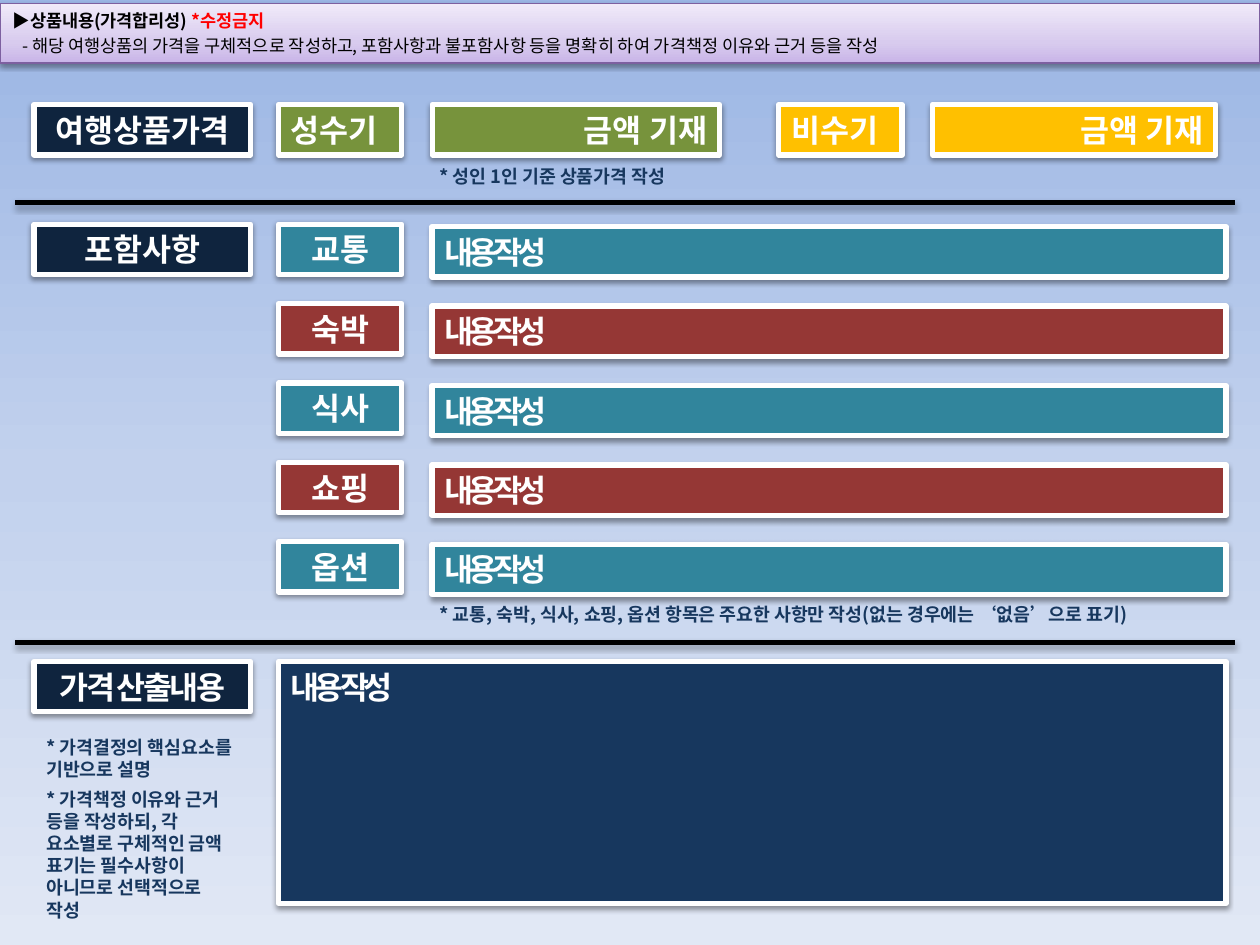
from copy import deepcopy

from lxml import etree
from pptx import Presentation
from pptx.dml.color import RGBColor
from pptx.enum import shapes, text
from pptx.oxml import ns
from pptx.util import Inches, Pt

FONT = "Noto Sans CJK KR"
WHITE = RGBColor(0xFF, 0xFF, 0xFF)
BLACK = RGBColor(0, 0, 0)
RED = RGBColor(0xFF, 0, 0)
INK = RGBColor(0x0F, 0x24, 0x3E)
NAVY = RGBColor(0x17, 0x37, 0x5E)
GREEN = RGBColor(0x77, 0x93, 0x3C)
AMBER = RGBColor(0xFF, 0xC0, 0)
TEAL = RGBColor(0x31, 0x85, 0x9C)
BRICK = RGBColor(0x95, 0x37, 0x35)
PURPLE = RGBColor(0x7D, 0x60, 0xA0)
SKY = [(0, RGBColor(0x9A, 0xB5, 0xE4)), (0.5, RGBColor(0xC2, 0xD1, 0xED)),
       (1, RGBColor(0xE1, 0xE8, 0xF5))]
LILAC = [(0, RGBColor(0xC9, 0xB5, 0xE8)), (0.35, RGBColor(0xD8, 0xCB, 0xEE)),
         (1, RGBColor(0xF0, 0xEA, 0xF9))]

LEFT = text.PP_ALIGN.LEFT
CENTER = text.PP_ALIGN.CENTER
RIGHT = text.PP_ALIGN.RIGHT
JUSTIFY = text.PP_ALIGN.JUSTIFY

HEADING = [("▶상품내용(가격합리성) ", BLACK), ("*수정금지", RED)]
GUIDE = ("- 해당 여행상품의 가격을 구체적으로 작성하고, 포함사항과 불포함사항 등을 "
         "명확히 하여 가격책정 이유와 근거 등을 작성")
SECTIONS = [("여행상품가격", 0.83, 0), ("포함사항", 1.78, 0), ("가격 산출내용", 5.25, -1.5)]
SEASONS = [("성수기", GREEN, 2.21, 3.43, 2.28), ("비수기", AMBER, 6.18, 7.4, 2.25)]
AMOUNT = "금액 기재"
ITEMS = ["교통", "숙박", "식사", "쇼핑", "옵션"]
CONTENT = "내용 작성"
NOTES = [
    (3.39, 1.26, 2.29, 0.28, ["* 성인 1인 기준 상품가격 작성"]),
    (3.39, 4.74, 6.1, 0.28, ["* 교통, 숙박, 식사, 쇼핑, 옵션 항목은 주요한 사항만 작성"
                             "(없는 경우에는 ‘없음’으로 표기)"]),
    (0.27, 5.79, 1.72, 1.58, ["* 가격결정의 핵심요소를 기반으로 설명",
                              "* 가격책정 이유와 근거 등을 작성하되, 각 요소별로 구체적인 금액 "
                              "표기는 필수사항이 아니므로 선택적으로 작성"]),
]
DIVIDERS = [1.61, 5.1]
SECTION_X, SECTION_W = 0.27, 1.72
LABEL_X, LABEL_W = 2.21, 0.98
CONTENT_X, CONTENT_END = 3.43, 9.73
ROW_H, ROW_STEP = 0.4, 0.63


def add_shadow(shape, alpha=38, distance=1.6):
    props = shape.element.spPr
    effects = etree.SubElement(props, ns.qn("a:effectLst"))
    shadow = etree.SubElement(effects, ns.qn("a:outerShdw"), blurRad=str(Pt(3.1)),
                              dist=str(Pt(distance)), dir="5400000", rotWithShape="0")
    color = etree.SubElement(shadow, ns.qn("a:srgbClr"), val="000000")
    etree.SubElement(color, ns.qn("a:alpha"), val=str(alpha * 1000))


def paint_gradient(fill, owner, stops, angle):
    fill.gradient()
    fill.gradient_angle = angle
    stop_list = owner.find(".//" + ns.qn("a:gsLst"))
    while len(stop_list) < len(stops):
        stop_list.append(deepcopy(stop_list[0]))
    for stop, (position, color) in zip(fill.gradient_stops, stops):
        stop.position = position
        stop.color.rgb = color


def write(para, wording, size, color, bold=True, spacing=0):
    para.line_spacing = Pt(size * 1.2)
    span = para.add_run()
    span.text = wording
    span.font.size = Pt(size)
    span.font.bold = bold
    span.font.color.rgb = color
    span.font.name = FONT
    props = span.font._element
    etree.SubElement(props, ns.qn("a:ea"), typeface=FONT)
    if spacing:
        props.set("spc", str(int(spacing * 100)))


def prepare_frame(shape):
    frame = shape.text_frame
    frame.word_wrap = True
    frame.auto_size = text.MSO_AUTO_SIZE.NONE
    frame.vertical_anchor = text.MSO_ANCHOR.TOP
    return frame


def add_box(slide, wording, left, top, width, color, align, height=ROW_H, spacing=0):
    box = slide.shapes.add_shape(shapes.MSO_SHAPE.RECTANGLE, Inches(left), Inches(top),
                                 Inches(width), Inches(height))
    box.fill.solid()
    box.fill.fore_color.rgb = color
    box.line.color.rgb = WHITE
    box.line.width = Pt(3)
    add_shadow(box)
    para = prepare_frame(box).paragraphs[0]
    para.alignment = align
    write(para, wording, 18, WHITE, spacing=spacing)


def add_note(slide, left, top, width, height, lines):
    note = slide.shapes.add_textbox(Inches(left), Inches(top), Inches(width), Inches(height))
    frame = prepare_frame(note)
    for index, line in enumerate(lines):
        para = frame.add_paragraph() if index else frame.paragraphs[0]
        para.space_before = Pt(4.8 if index else 0)
        write(para, line, 10.5, NAVY)


def add_divider(slide, top):
    line = slide.shapes.add_connector(shapes.MSO_CONNECTOR.STRAIGHT, Inches(0.12), Inches(top),
                                      Inches(9.8), Inches(top))
    line.line.color.rgb = BLACK
    line.line.width = Pt(3)
    add_shadow(line, 35, 1.8)


def format_title(title):
    title.left, title.top = Inches(0), Inches(0.03)
    title.width, title.height = Inches(10), Inches(0.47)
    paint_gradient(title.fill, title.element, LILAC, 90)
    title.line.color.rgb = PURPLE
    title.line.width = Pt(0.75)
    add_shadow(title)
    frame = prepare_frame(title)
    heading, guide = frame.paragraphs[0], frame.add_paragraph()
    heading.alignment = guide.alignment = LEFT
    for wording, color in HEADING:
        write(heading, wording, 10, color)
    guide.space_before = Pt(2.4)
    guide._p.get_or_add_pPr().set("marL", str(Inches(0.08)))
    write(guide, GUIDE, 10, BLACK, bold=False)


def main():
    deck = Presentation()
    deck.slide_width, deck.slide_height = Inches(10), Inches(7.5)
    slide = deck.slides.add_slide(deck.slide_layouts[5])
    paint_gradient(slide.background.fill, slide.element, SKY, 270)
    format_title(slide.shapes.title)

    for wording, top, spacing in SECTIONS:
        add_box(slide, wording, SECTION_X, top, SECTION_W, INK, CENTER, spacing=spacing)
    for season, color, label_x, amount_x, amount_w in SEASONS:
        add_box(slide, season, label_x, 0.83, LABEL_W, color, LEFT)
        add_box(slide, AMOUNT, amount_x, 0.83, amount_w, color, RIGHT)
    for row, item in enumerate(ITEMS):
        color = BRICK if row % 2 else TEAL
        top = 1.78 + row * ROW_STEP
        add_box(slide, item, LABEL_X, top, LABEL_W, color, CENTER)
        add_box(slide, CONTENT, CONTENT_X, top + 0.02, CONTENT_END - CONTENT_X, color,
                JUSTIFY, spacing=-3)
    add_box(slide, CONTENT, LABEL_X, 5.25, CONTENT_END - LABEL_X, NAVY, JUSTIFY, 1.92, -3)
    for top in DIVIDERS:
        add_divider(slide, top)
    for note in NOTES:
        add_note(slide, *note)
    deck.save("out.pptx")


if __name__ == "__main__":
    main()
